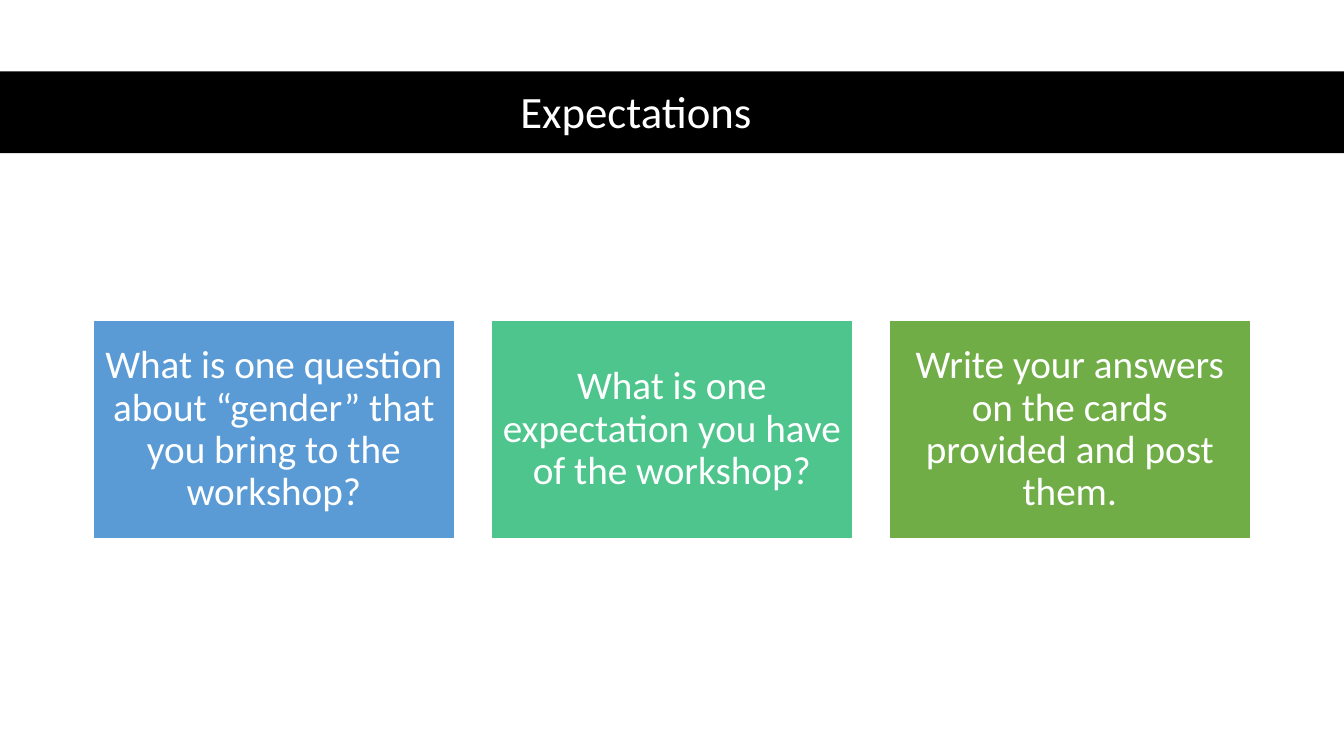
from dataclasses import dataclass

from pptx import Presentation
from pptx.dml.color import RGBColor
from pptx.enum.shapes import MSO_SHAPE
from pptx.enum.text import MSO_ANCHOR as Anchor, PP_ALIGN as Align
from pptx.util import Cm, Pt

COLORS = {
    "white": "FFFFFF",
    "black": "000000",
    "blue": "5B9BD5",
    "teal": "4DC58D",
    "green": "70AD47",
}
FONT = "Calibri"
SLIDE_W, SLIDE_H = 33.87, 19.05
MARGIN = 2.34
CARD_TOP, CARD_W, CARD_H = 8.08, 9.12, 5.49
CARD_STEP = 10.03
CARD_INSET = 0.3


@dataclass
class Card:
    text: str
    color: str


CARDS = [
    Card("What is one question about “gender” that you bring to the workshop?", "blue"),
    Card("What is one expectation you have of the workshop?", "teal"),
    Card("Write your answers on the cards provided and post them.", "green"),
]


def rgb(name: str) -> RGBColor:
    return RGBColor.from_string(COLORS[name])


def add_box(s, left: float, top: float, width: float, height: float, color: str):
    """Add a filled rectangle without outline or shadow."""
    sp = s.shapes.add_shape(MSO_SHAPE.RECTANGLE, Cm(left), Cm(top), Cm(width), Cm(height))
    sp.shadow.inherit = False
    sp.fill.solid()
    sp.fill.fore_color.rgb = rgb(color)
    sp.line.fill.background()
    return sp


def set_text(sp, text: str, size: int) -> None:
    """Write one centred white paragraph."""
    tf = sp.text_frame
    tf.word_wrap = True
    tf.vertical_anchor = Anchor.MIDDLE
    p = tf.paragraphs[0]
    p.text = text
    p.alignment = Align.CENTER
    p.line_spacing = 0.9
    p.font.name = FONT
    p.font.size = Pt(size)
    p.font.color.rgb = rgb("white")


def add_card(s, card: Card, left: float) -> None:
    sp = add_box(s, left, CARD_TOP, CARD_W, CARD_H, card.color)
    sp.line.color.rgb = rgb("white")
    sp.line.width = Pt(1)
    tf = sp.text_frame
    tf.margin_left = tf.margin_right = Cm(CARD_INSET)
    tf.margin_top = tf.margin_bottom = Cm(CARD_INSET)
    set_text(sp, card.text, 28)


def main() -> None:
    prs = Presentation()
    prs.slide_width, prs.slide_height = Cm(SLIDE_W), Cm(SLIDE_H)
    s = prs.slides.add_slide(prs.slide_layouts[6])

    # Title band, with the heading set slightly left of centre
    add_box(s, 0, 1.8, SLIDE_W, 2.06, "black")
    title = s.shapes.add_textbox(Cm(MARGIN), Cm(1.88), Cm(29.21), Cm(1.98))
    title.text_frame.margin_right = Cm(2.08)
    set_text(title, "Expectations", 32)

    # Row of cards
    for i, card in enumerate(CARDS):
        add_card(s, card, MARGIN + i * CARD_STEP)

    prs.save("out.pptx")


if __name__ == "__main__":
    main()
